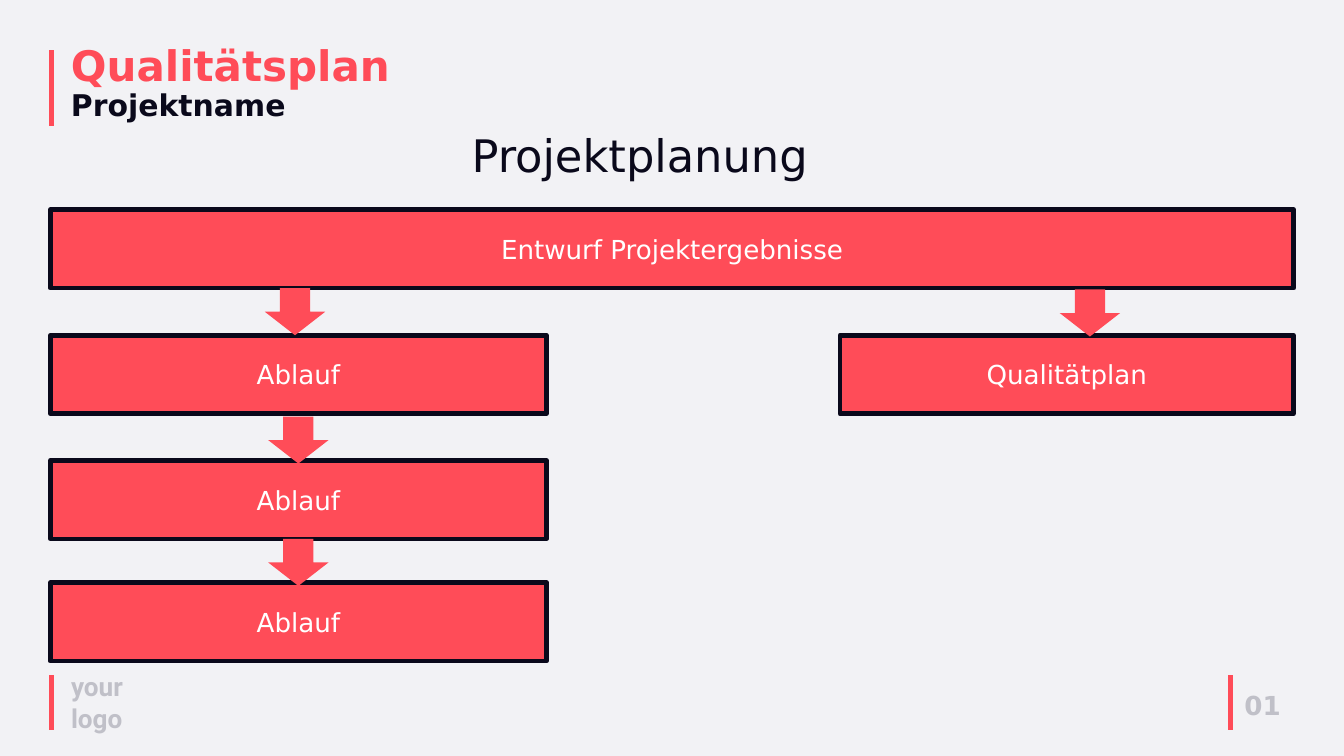
from dataclasses import dataclass

from lxml import etree
from pptx import Presentation
from pptx.dml.color import RGBColor
from pptx.enum import shapes, text
from pptx.oxml import ns
from pptx.util import Pt


@dataclass(frozen=True)
class Theme:
    background: RGBColor = RGBColor.from_string("F2F2F5")
    accent: RGBColor = RGBColor.from_string("FF4C58")
    dark: RGBColor = RGBColor.from_string("0A091B")
    muted: RGBColor = RGBColor.from_string("C0C0C8")
    white: RGBColor = RGBColor.from_string("FFFFFF")
    font: str = "DejaVu Sans"
    logo_font: str = "Roboto"
    title: int = 45
    subtitle: int = 32
    heading: int = 48
    body: int = 28
    stroke: int = 5


THEME = Theme()
MARGIN = 54
BOX_HEIGHT = 84.2
ARROW_WIDTH, ARROW_HEIGHT = 64.8, 50.4


def set_font(font, size, color, bold=False, name=THEME.font):
    font.name, font.size, font.bold = name, Pt(size), bold
    font.color.rgb = color


def add_text(slide, box, content, size, color, bold=False, name=THEME.font):
    shape = slide.shapes.add_textbox(*map(Pt, box))
    frame = shape.text_frame
    frame.word_wrap = True
    frame.auto_size = text.MSO_AUTO_SIZE.SHAPE_TO_FIT_TEXT
    paragraph = frame.paragraphs[0]
    paragraph.text = content
    set_font(paragraph.font, size, color, bold, name)
    return frame


def add_bar(slide, x, top, bottom):
    """Vertical accent line."""
    line = slide.shapes.add_connector(
        shapes.MSO_CONNECTOR.STRAIGHT, Pt(x), Pt(top), Pt(x), Pt(bottom))
    line.line.color.rgb = THEME.accent
    line.line.width = Pt(THEME.stroke)
    etree.SubElement(line._element.spPr, ns.qn("a:effectLst"))


def add_filled(slide, kind, box):
    shape = slide.shapes.add_shape(kind, *map(Pt, box))
    shape.shadow.inherit = False
    shape.fill.solid()
    shape.fill.fore_color.rgb = THEME.accent
    shape.line.fill.background()
    return shape


def add_step(slide, box, label):
    shape = add_filled(slide, shapes.MSO_SHAPE.RECTANGLE, box)
    shape.line.color.rgb = THEME.dark
    shape.line.width = Pt(THEME.stroke)
    frame = shape.text_frame
    frame.vertical_anchor = text.MSO_ANCHOR.MIDDLE
    paragraph = frame.paragraphs[0]
    paragraph.text = label
    paragraph.alignment = text.PP_ALIGN.CENTER
    set_font(paragraph.font, THEME.body, THEME.white)


def add_header(slide, left, top, width, height):
    add_bar(slide, left + 1.4, top, top + 81.4)
    frame = add_text(slide, (left + 15, top - 9.4, width, height),
                     "Qualitätsplan", THEME.title, THEME.accent, True)
    frame.vertical_anchor = text.MSO_ANCHOR.MIDDLE
    paragraph = frame.paragraphs[0]
    paragraph.line_spacing = 0.9
    paragraph.add_line_break()
    subtitle = paragraph.add_run()
    subtitle.text = "Projektname"
    set_font(subtitle.font, THEME.subtitle, THEME.dark, True)


def add_flow(slide, left, top, width):
    """Draft across the full width, steps on the left, quality plan on the right."""
    rows = [top + offset for offset in (0, 134.6, 268.6, 399.6)]
    step_width, plan_width = 531.4, 486
    add_step(slide, (left, rows[0], width, BOX_HEIGHT), "Entwurf Projektergebnisse")
    for row in rows[1:]:
        add_step(slide, (left, row, step_width, BOX_HEIGHT), "Ablauf")
    add_step(slide, (left + width - plan_width, rows[1], plan_width, BOX_HEIGHT),
             "Qualitätplan")

    # Arrows: left offset, row above, gap below that row's box
    for x, row, gap in ((229.7, 0, 0), (233.3, 1, 2.9), (233.3, 2, 0), (1081.4, 0, 1.4)):
        add_filled(slide, shapes.MSO_SHAPE.DOWN_ARROW,
                   (left + x, rows[row] + BOX_HEIGHT + gap, ARROW_WIDTH, ARROW_HEIGHT))


def add_footer(slide, left, top, width, height):
    page_x = left + 1264.3
    for x in (left + 1.4, page_x):
        add_bar(slide, x, top, top + height)
    add_text(slide, (left + 15, top - 8.6, 85.7, 74.9), "your logo",
             THEME.body, THEME.muted, True, THEME.logo_font)
    add_text(slide, (page_x + 8, top + 11.5, width - 1195.2, 41), "01",
             THEME.body, THEME.muted, True)


def main():
    presentation = Presentation()
    presentation.slide_width, presentation.slide_height = Pt(1440), Pt(810)
    slide = presentation.slides.add_slide(presentation.slide_layouts[6])
    slide.background.fill.solid()
    slide.background.fill.fore_color.rgb = THEME.background

    add_header(slide, MARGIN, 54, 429, 91.4)
    add_footer(slide, MARGIN, 723.6, 1332, 58.3)
    add_text(slide, (498.2, 133.2, 612, 65.5), "Projektplanung",
             THEME.heading, THEME.dark)
    add_flow(slide, MARGIN, 224.6, 1332)
    presentation.save("out.pptx")


if __name__ == "__main__":
    main()
